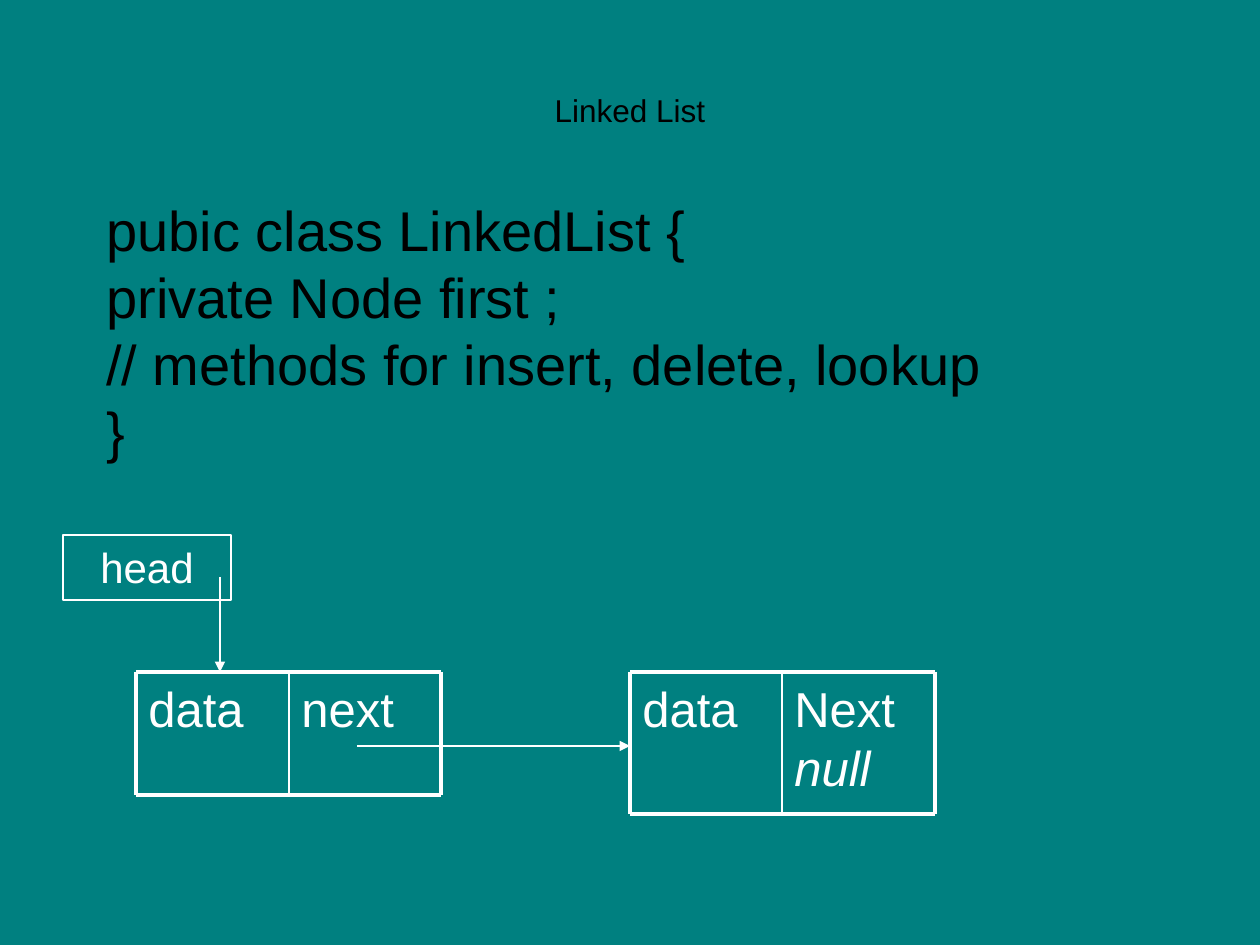
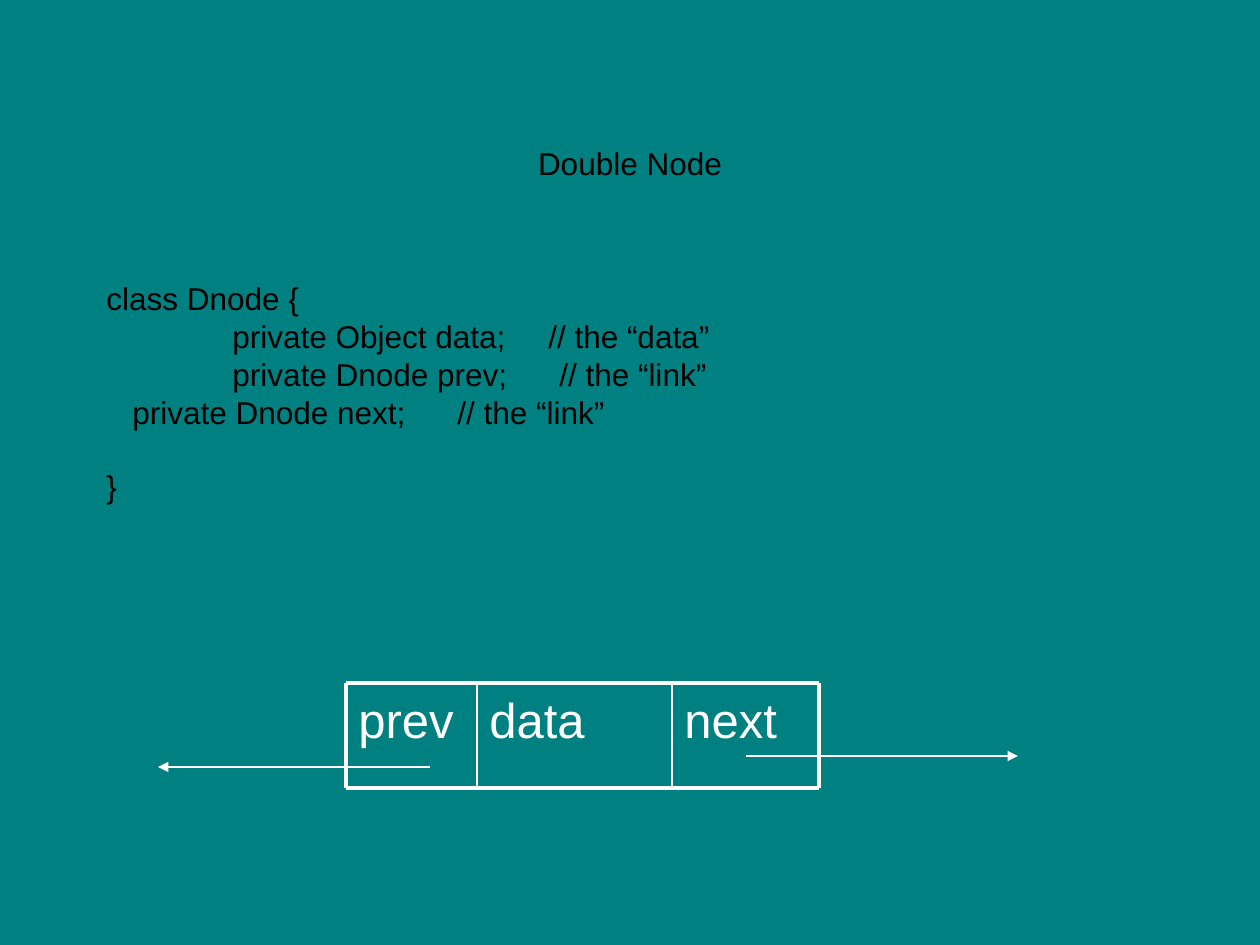
from itertools import accumulate

from lxml.etree import SubElement
from pptx import Presentation
from pptx.dml.color import RGBColor
from pptx.enum.shapes import MSO_CONNECTOR as LINE, MSO_SHAPE as SHAPE
from pptx.enum.text import MSO_ANCHOR as ANCHOR, MSO_AUTO_SIZE as FIT, PP_ALIGN as ALIGN
from pptx.oxml.ns import qn
from pptx.util import Emu, Pt

EMU_PER_PX = 914400 / 126
TEAL, BLACK, WHITE = "008080", "000000", "FFFFFF"
FONT = "Arial"
FRAME_FORMAT = {"word_wrap": True, "auto_size": FIT.NONE}
OUTER, DIVIDER, THIN = 2.25, 1, 0.75


def px(length):
    return Emu(round(length * EMU_PER_PX))


def color(hex_code):
    return RGBColor.from_string(hex_code)


def apply(target, values):
    for name, value in values.items():
        setattr(target, name, value)


def write(frame, lines, size, hex_code, align=ALIGN.LEFT, anchor=ANCHOR.TOP, italic_lines=()):
    apply(frame, FRAME_FORMAT | {"vertical_anchor": anchor})
    for index, line in enumerate(lines):
        paragraph = frame.paragraphs[0] if index == 0 else frame.add_paragraph()
        paragraph.alignment = align
        run = paragraph.add_run()
        run.text = line
        apply(run.font, {"name": FONT, "size": Pt(size), "bold": False,
                         "italic": line in italic_lines})
        run.font.color.rgb = color(hex_code)


def add_text(slide, box, lines, size, hex_code, **style):
    frame = slide.shapes.add_textbox(*map(px, box)).text_frame
    write(frame, lines, size, hex_code, **style)
    return frame


def add_line(slide, start, end, width, arrow=False):
    connector = slide.shapes.add_connector(LINE.STRAIGHT, *map(px, (*start, *end)))
    connector.line.color.rgb = color(WHITE)
    connector.line.width = Pt(width)
    properties = connector._element.spPr
    if arrow:
        SubElement(properties.find(qn("a:ln")), qn("a:tailEnd"), type="triangle")
    SubElement(properties, qn("a:effectLst"))


def add_titled_slide(deck, title, box):
    slide = deck.slides.add_slide(deck.slide_layouts[5])
    heading = slide.shapes.title
    apply(heading, dict(zip(("left", "top", "width", "height"), map(px, box))))
    write(heading.text_frame, [title], 18, BLACK, ALIGN.CENTER, ANCHOR.MIDDLE)
    return slide


def add_node(slide, left, top, height, fields):
    edges = list(accumulate((width for width, _ in fields), initial=left))
    bottom = top + height
    for edge, (width, lines) in zip(edges, fields):
        add_text(slide, (edge, top, width, height), lines, 28, WHITE, italic_lines=("null",))
    for y in (top, bottom):
        add_line(slide, (left, y), (edges[-1], y), OUTER)
    for edge in edges:
        weight = OUTER if edge in (left, edges[-1]) else DIVIDER
        add_line(slide, (edge, top), (edge, bottom), weight)


def add_head(slide, box):
    left, top, width, height = box
    add_line(slide, (left + 157, top + 42), (left + 157, top + 137), THIN, arrow=True)
    head = slide.shapes.add_shape(SHAPE.RECTANGLE, *map(px, box))
    head.shadow.inherit = False
    head.fill.background()
    head.line.color.rgb = color(WHITE)
    head.line.width = Pt(THIN)
    write(head.text_frame, ["head"], 24, WHITE, ALIGN.CENTER)


def add_tab_stops(paragraph, stops):
    tab_list = SubElement(paragraph._p.get_or_add_pPr(), qn("a:tabLst"))
    for stop in stops:
        SubElement(tab_list, qn("a:tab"), pos=str(px(stop)), algn="l")


def build_linked_list(deck):
    slide = add_titled_slide(deck, "Linked List", (94, 56, 1072, 108))
    add_text(slide, (94, 189, 1072, 346), [
        "pubic class LinkedList {",
        "private Node first ;",
        "// methods for insert, delete, lookup",
        "}",
    ], 32, BLACK)
    add_node(slide, 136, 672, 123, [(153, ["data"]), (152, ["next"])])
    add_node(slide, 630, 672, 142, [(152, ["data"]), (153, ["Next", "null"])])
    add_head(slide, (63, 535, 168, 65))
    add_line(slide, (357, 746), (630, 746), THIN, arrow=True)


def build_double_node(deck):
    slide = add_titled_slide(deck, "Double Node", (94, 84, 1072, 158))
    code = add_text(slide, (94, 273, 1072, 609), [
        "class Dnode {",
        "\tprivate Object data;\t// the “data”",
        "\tprivate Dnode prev;\t// the “link”",
        "\tprivate Dnode next;\t// the “link”",
        "}",
    ], 18, BLACK)
    for paragraph, stops in zip(code.paragraphs[1:4], [(126, 442), (126, 453), (26, 351)]):
        add_tab_stops(paragraph, stops)
    code.paragraphs[-1].space_before = Pt(21)
    add_node(slide, 346, 683, 105, [(131, ["prev"]), (195, ["data"]), (147, ["next"])])
    add_line(slide, (746, 756), (1018, 756), THIN, arrow=True)
    add_line(slide, (430, 767), (158, 767), THIN, arrow=True)


def main():
    deck = Presentation()
    deck.slide_width, deck.slide_height = px(1260), px(945)
    background = deck.slide_master.background.fill
    background.solid()
    background.fore_color.rgb = color(TEAL)
    build_linked_list(deck)
    build_double_node(deck)
    deck.save("out.pptx")


if __name__ == "__main__":
    main()
